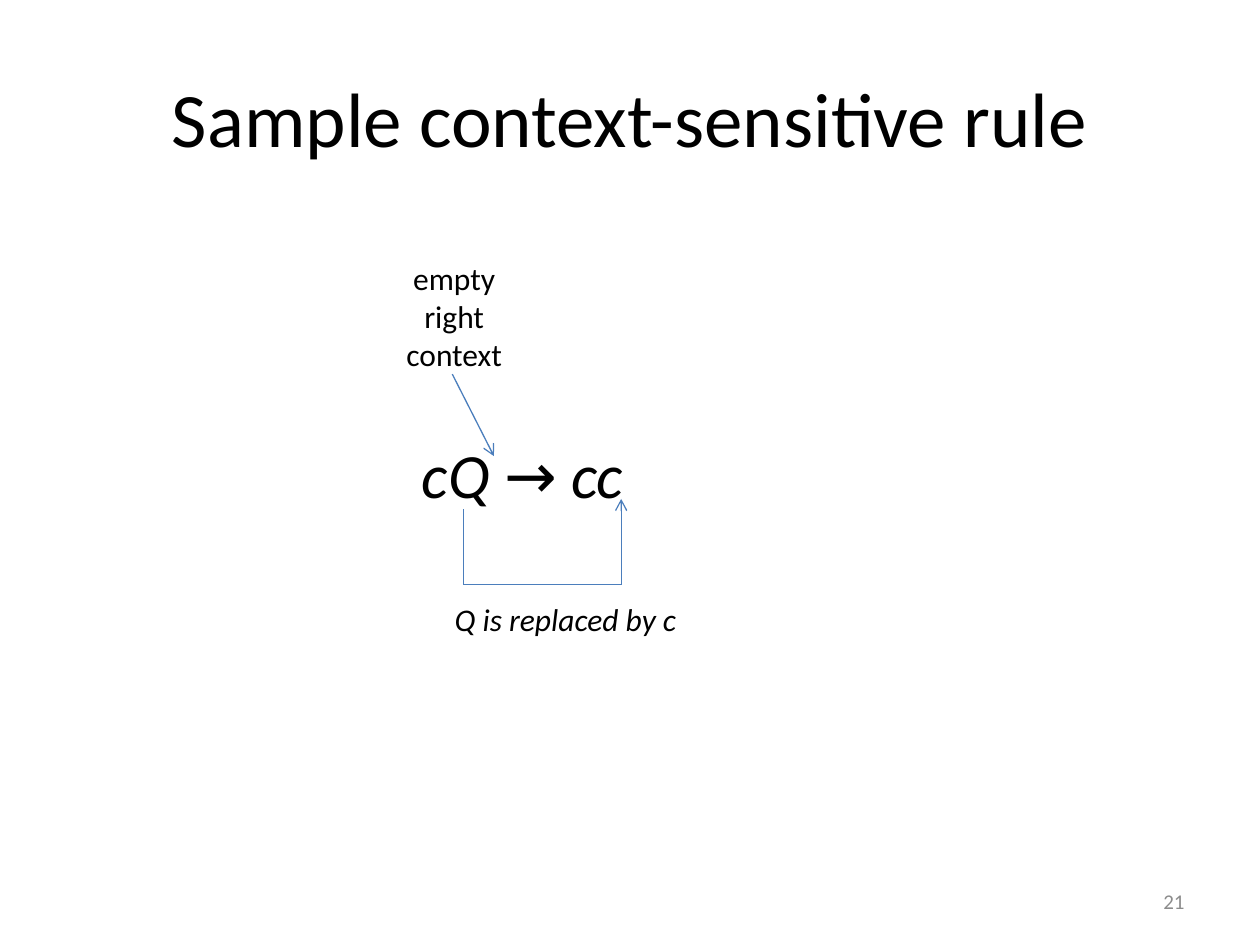
from dataclasses import dataclass
from itertools import pairwise

from lxml.etree import SubElement
from pptx import Presentation
from pptx.dml.color import RGBColor
from pptx.enum.shapes import MSO_CONNECTOR
from pptx.enum.text import MSO_ANCHOR, MSO_AUTO_SIZE, PP_ALIGN
from pptx.oxml.ns import qn
from pptx.util import Inches, Pt


@dataclass(frozen=True)
class Theme:
    font: str = "Calibri"
    symbol_font: str = "Roboto Condensed"
    ink: str = "000000"
    muted: str = "8C8C8C"
    accent: str = "4B7EBC"
    title_size: int = 44
    rule_size: int = 36
    label_size: int = 18
    number_size: int = 12
    line_width: float = 0.75


def apply_format(target, values):
    for name, value in values.items():
        setattr(target, name, value)


class SlideBuilder:
    def __init__(self, deck, theme):
        self.theme = theme
        self.page = deck.slides.add_slide(deck.slide_layouts[5])

    def fill_text(self, box, paragraphs, size, color, align, frame_format):
        frame = box.text_frame
        apply_format(frame, frame_format)
        for index, spans in enumerate(paragraphs):
            para = frame.paragraphs[0] if index == 0 else frame.add_paragraph()
            para.alignment = align
            for text, span_format in spans:
                span = para.add_run()
                span.text = text
                values = {"name": self.theme.font, "size": Pt(size), **span_format}
                apply_format(span.font, values)
                span.font.color.rgb = RGBColor.from_string(color)

    def title(self, text, left, top, width, height):
        box = self.page.shapes.title
        place = {"left": left, "top": top, "width": width, "height": height}
        apply_format(box, {name: Inches(value) for name, value in place.items()})
        self.fill_text(box, [[(text, {})]], self.theme.title_size, self.theme.ink,
                       PP_ALIGN.CENTER, {"vertical_anchor": MSO_ANCHOR.MIDDLE})

    def label(self, place, paragraphs, size, align=PP_ALIGN.LEFT):
        box = self.page.shapes.add_textbox(*map(Inches, place))
        self.fill_text(box, paragraphs, size, self.theme.ink, align,
                       {"word_wrap": False, "auto_size": MSO_AUTO_SIZE.SHAPE_TO_FIT_TEXT})

    def page_number(self, place, number):
        box = self.page.shapes.add_textbox(*map(Inches, place))
        self.fill_text(box, [[(number, {})]], self.theme.number_size, self.theme.muted,
                       PP_ALIGN.RIGHT,
                       {"word_wrap": True, "vertical_anchor": MSO_ANCHOR.MIDDLE})

    def line(self, start, end, arrow=False):
        line = self.page.shapes.add_connector(
            MSO_CONNECTOR.STRAIGHT, *map(Inches, (*start, *end)))
        line.line.color.rgb = RGBColor.from_string(self.theme.accent)
        line.line.width = Pt(self.theme.line_width)
        if arrow:
            SubElement(line.line._get_or_add_ln(), qn("a:tailEnd"), type="arrow")
        SubElement(line._element.spPr, qn("a:effectLst"))

    def arrow_route(self, points):
        segments = list(pairwise(points))
        for index, (start, end) in enumerate(segments, 1):
            self.line(start, end, arrow=index == len(segments))


def main():
    deck = Presentation()
    apply_format(deck, {"slide_width": Inches(10), "slide_height": Inches(7.5)})
    theme = Theme()
    builder = SlideBuilder(deck, theme)
    italic = {"italic": True}

    builder.title("Sample context-sensitive rule", 0.5, 0.3, 9, 1.25)
    builder.page_number((7.17, 6.95, 2.33, 0.4), "21")
    rule = [("cQ ", italic), ("→ ", {"name": theme.symbol_font}), ("cc", italic)]
    builder.label((3.25, 3.41, 1.9, 0.71), [rule], theme.rule_size)
    context = [[(word, {})] for word in ("empty", "right", "context")]
    builder.label((3.12, 2.01, 0.97, 1.01), context, theme.label_size, PP_ALIGN.CENTER)
    builder.arrow_route([(3.68, 4.04), (3.68, 4.64), (4.93, 4.64), (4.93, 3.96)])
    builder.label((3.51, 4.71, 1.98, 0.4), [[("Q is replaced by c", italic)]],
                  theme.label_size)
    builder.arrow_route([(3.59, 2.97), (3.92, 3.62)])

    deck.save("out.pptx")


if __name__ == "__main__":
    main()
